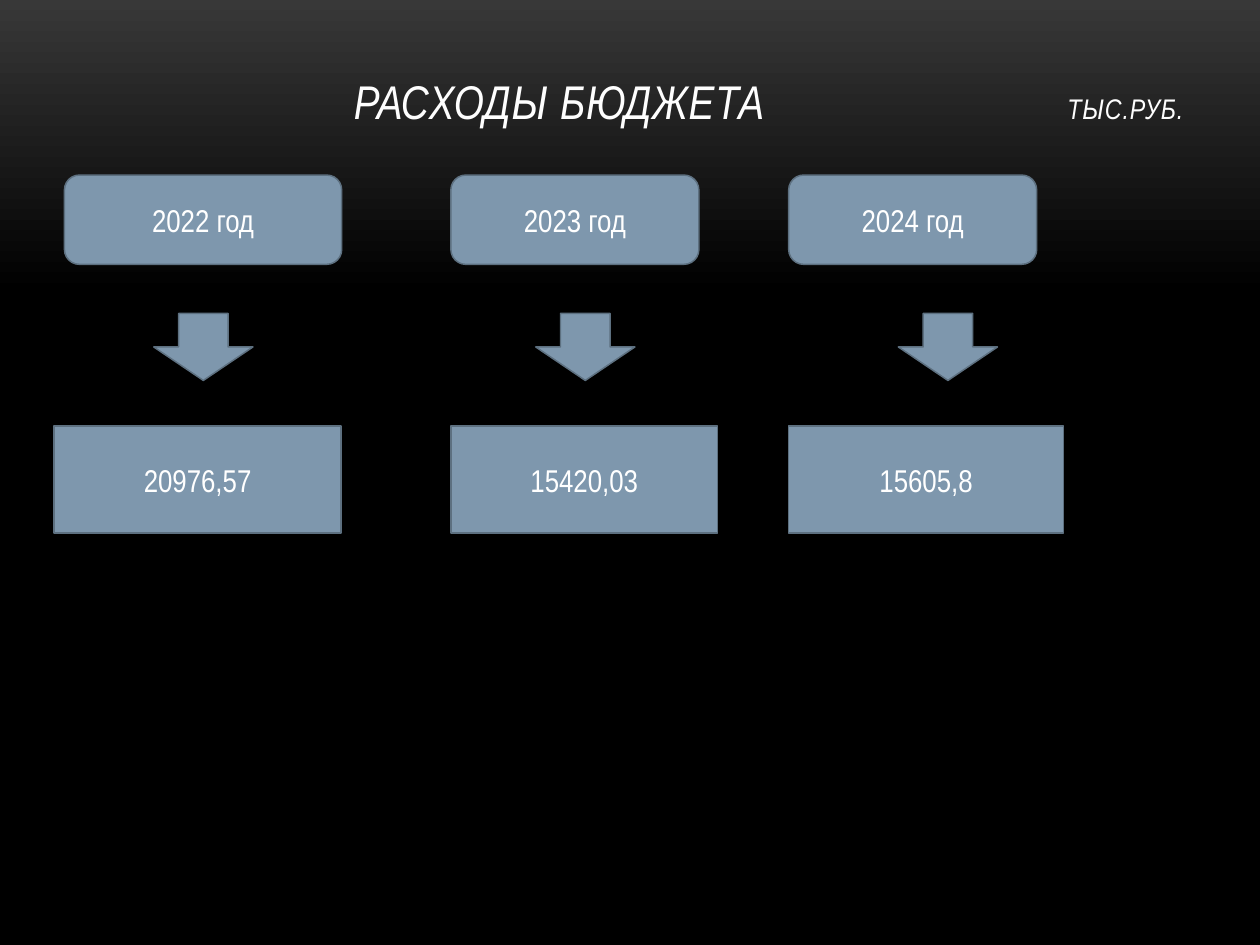
from dataclasses import dataclass

from lxml.etree import SubElement
from pptx import Presentation
from pptx.dml.color import RGBColor
from pptx.enum.shapes import MSO_SHAPE
from pptx.enum.text import MSO_ANCHOR, PP_ALIGN
from pptx.oxml.ns import qn
from pptx.slide import Slide
from pptx.util import Cm, Pt

COLORS = {
    "glow": "383838",
    "black": "000000",
    "title": "FEFEFE",
    "fill": "7E97AD",
    "line": "5D7080",
    "text": "FFFFFF",
}
FONT = "Arial Narrow"
TITLE_TABS = [(5.61, "l"), (22.33, "r")]


@dataclass
class Row:
    """Top and height shared by one kind of shape, in centimetres."""
    kind: MSO_SHAPE
    top: float
    height: float


@dataclass
class Part:
    left: float
    width: float
    text: str = ""


@dataclass
class YearColumn:
    heading: Part
    arrow: Part
    amount: Part


HEADINGS = Row(MSO_SHAPE.ROUNDED_RECTANGLE, 3.53, 1.8)
ARROWS = Row(MSO_SHAPE.DOWN_ARROW, 6.32, 1.35)
AMOUNTS = Row(MSO_SHAPE.RECTANGLE, 8.59, 2.16)

COLUMNS = [
    YearColumn(Part(1.3, 5.59, "2022 год"), Part(3.1, 2), Part(1.09, 5.79, "20976,57")),
    YearColumn(Part(9.09, 5, "2023 год"), Part(10.8, 2), Part(9.09, 5.38, "15420,03")),
    YearColumn(Part(15.9, 5, "2024 год"), Part(18.11, 2), Part(15.9, 5.54, "15605,8")),
]


def color(name: str) -> RGBColor:
    return RGBColor.from_string(COLORS[name])


def add_run(paragraph, text: str, size: float, color_name: str, italic: bool = False):
    run = paragraph.add_run()
    run.text = text
    for name, value in {"name": FONT, "size": Pt(size), "italic": italic}.items():
        setattr(run.font, name, value)
    run.font.color.rgb = color(color_name)
    return run


def set_background(slide: Slide) -> None:
    fill = slide.background.fill
    fill.gradient()
    fill.gradient_angle = 270
    for stop, (name, position) in zip(fill.gradient_stops, [("glow", 0), ("black", 0.31)]):
        stop.color.rgb = color(name)
        stop.position = position


def add_title(slide: Slide) -> None:
    title = slide.shapes.title
    box = {"left": Cm(1.27), "top": Cm(0.76), "width": Cm(22.86), "height": Cm(1.96)}
    for name, value in box.items():
        setattr(title, name, value)
    title.text_frame.vertical_anchor = MSO_ANCHOR.BOTTOM
    paragraph = title.text_frame.paragraphs[0]
    paragraph.alignment = PP_ALIGN.LEFT

    # Tab stops place the heading and the unit of measure
    tab_list = SubElement(paragraph._p.get_or_add_pPr(), qn("a:tabLst"))
    for position, alignment in TITLE_TABS:
        SubElement(tab_list, qn("a:tab"), pos=str(Cm(position)), algn=alignment)
    for text, size in [("\tРАСХОДЫ БЮДЖЕТА", 27), ("\tТЫС.РУБ.", 16.2)]:
        run = add_run(paragraph, text, size, "title", italic=True)
        run._r.get_or_add_rPr().set("spc", "50")


def add_part(slide: Slide, row: Row, part: Part) -> None:
    shape = slide.shapes.add_shape(
        row.kind, Cm(part.left), Cm(row.top), Cm(part.width), Cm(row.height))
    shape.shadow.inherit = False
    shape.fill.solid()
    shape.fill.fore_color.rgb = color("fill")
    shape.line.color.rgb = color("line")
    shape.line.width = Pt(0.85)
    if part.text:
        shape.text_frame.vertical_anchor = MSO_ANCHOR.MIDDLE
        paragraph = shape.text_frame.paragraphs[0]
        paragraph.alignment = PP_ALIGN.CENTER
        add_run(paragraph, part.text, 18, "text")


def main() -> None:
    presentation = Presentation()
    presentation.slide_width, presentation.slide_height = Cm(25.4), Cm(19.05)
    slide = presentation.slides.add_slide(presentation.slide_layouts.get_by_name("Title Only"))
    set_background(slide)
    add_title(slide)

    # Year, arrow and amount for each budget year
    for column in COLUMNS:
        add_part(slide, HEADINGS, column.heading)
        add_part(slide, ARROWS, column.arrow)
        add_part(slide, AMOUNTS, column.amount)

    presentation.save("out.pptx")


if __name__ == "__main__":
    main()
